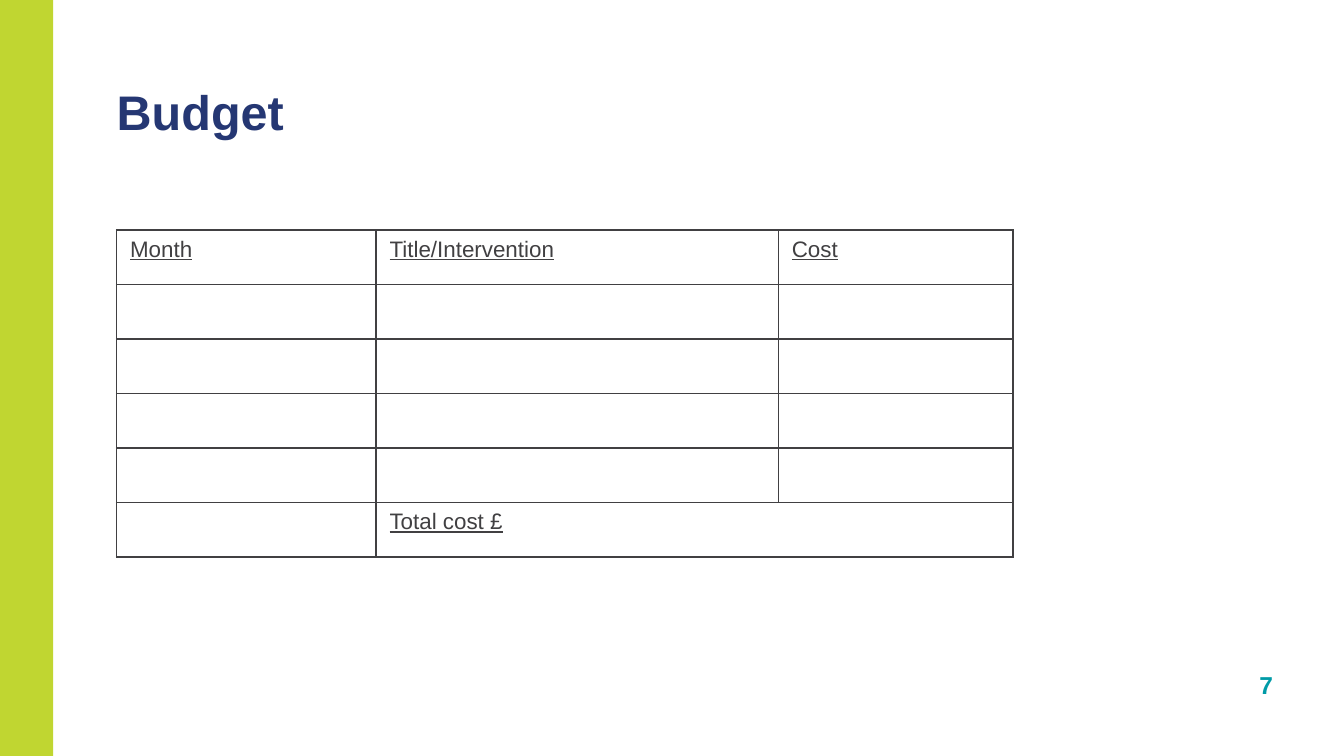
from lxml.etree import SubElement
from pptx import Presentation
from pptx.dml.color import RGBColor
from pptx.enum.shapes import MSO_SHAPE
from pptx.enum.text import MSO_ANCHOR, PP_ALIGN
from pptx.oxml.ns import qn
from pptx.util import Pt

COLORS = {"lime": "C0D631", "teal": "009BA7", "navy": "253773", "gray": "414042"}


def color(name):
    """Return the named colour."""
    return RGBColor.from_string(COLORS[name])


def style(para, size, name, bold=False, under=False):
    """Set the font of a paragraph."""
    font = para.font
    font.name, font.size = "Arial", Pt(size)
    font.bold, font.underline = bold, under
    font.color.rgb = color(name)


def add_bar(slide, left, top, width, height):
    """Draw the band along the left edge."""
    bar = slide.shapes.add_shape(
        MSO_SHAPE.RECTANGLE, Pt(left), Pt(top), Pt(width), Pt(height))
    bar.shadow.inherit = False
    bar.fill.solid()
    bar.fill.fore_color.rgb = color("lime")
    bar.line.fill.background()


def add_label(slide, box, text, size, name, align=PP_ALIGN.LEFT, inset=(0, 0)):
    """Add a bold line of text at the bottom of a box."""
    frame = slide.shapes.add_textbox(*map(Pt, box)).text_frame
    frame.word_wrap = True
    frame.vertical_anchor = MSO_ANCHOR.BOTTOM
    frame.margin_left = frame.margin_right = Pt(inset[0])
    frame.margin_top = frame.margin_bottom = Pt(inset[1])
    para = frame.paragraphs[0]
    para.text, para.alignment = text, align
    style(para, size, name, bold=True)


def add_edges(cell):
    """Rule all four sides of a cell."""
    props = cell._tc.get_or_add_tcPr()
    for side in "LRTB":
        line = SubElement(props, qn(f"a:ln{side}"), w=str(Pt(1)))
        fill = SubElement(line, qn("a:solidFill"))
        SubElement(fill, qn("a:srgbClr"), val=COLORS["gray"])


def add_budget(slide, left, top, widths, height, rows):
    """Build the budget table with a merged total."""
    table = slide.shapes.add_table(
        len(rows), len(widths), Pt(left), Pt(top),
        Pt(sum(widths)), Pt(height * len(rows))).table
    table.first_row = table.horz_banding = False
    for col, width in zip(table.columns, widths):
        col.width = Pt(width)
    for r, texts in enumerate(rows):
        table.rows[r].height = Pt(height)
        for c, text in enumerate(texts):
            cell = table.cell(r, c)
            add_edges(cell)
            cell.fill.background()
            cell.text = text
            style(cell.text_frame.paragraphs[0], 12, "gray", under=True)
    last = len(rows) - 1
    table.cell(last, 1).merge(table.cell(last, 2))


def main():
    """Build and save the slide."""
    deck = Presentation()
    deck.slide_width, deck.slide_height = Pt(720), Pt(405)
    slide = deck.slides.add_slide(deck.slide_layouts[6])
    add_bar(slide, -8.5, -3, 37, 411)
    add_label(slide, (632, 355, 57, 23), "7", 13.1, "teal",
              PP_ALIGN.RIGHT, (7.2, 3.6))
    add_label(slide, (62.5, 44, 442, 31), "Budget", 26, "navy")
    rows = [("Month", "Title/Intervention", "Cost"),
            *[("", "", "")] * 4, ("", "Total cost £", "")]
    add_budget(slide, 62.5, 123.2, (139, 215.5, 125.7), 29.2, rows)
    deck.save("out.pptx")


if __name__ == "__main__":
    main()
